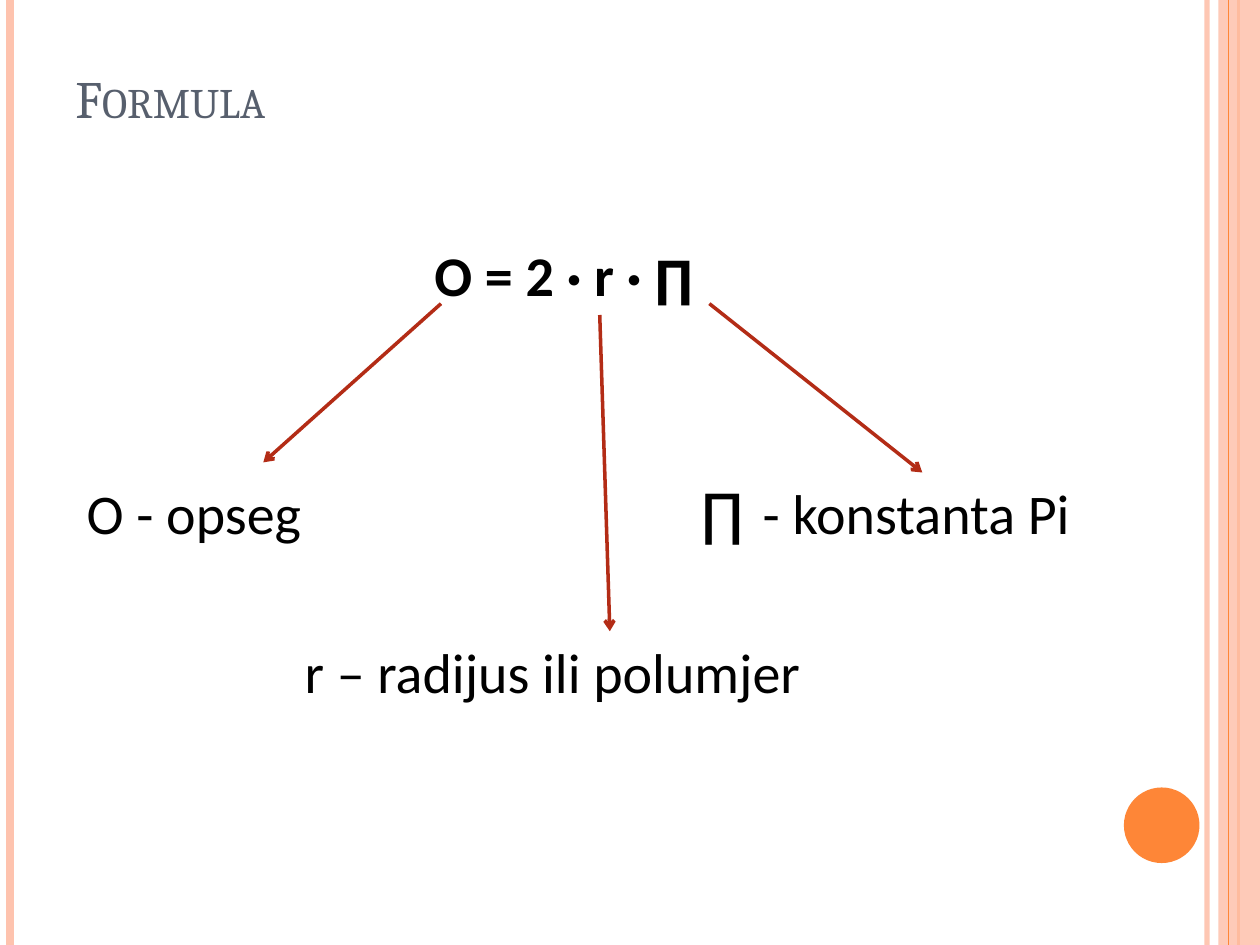
from typing import NamedTuple

from lxml import etree
from pptx import Presentation
from pptx import util as u
from pptx.dml.color import RGBColor
from pptx.enum import shapes, text
from pptx.oxml import ns

# The slide is a grid of 100 columns and 75 rows
WIDTH, HEIGHT = u.Inches(10), u.Inches(7.5)
COLUMNS, ROWS = 100, 75


class Theme:
    pale, orange, arrow = "FEC3AE", "FE8637", "B32C16"
    title, ink = "575F6D", "000000"
    heading_font, body_font, symbol_font = "Cambria", "Calibri", "Comic Neue"
    title_size, body_size, symbol_size = 30, 32, 28
    arrow_width = 2


class Box(NamedTuple):
    column: float
    row: float
    columns: float
    rows: float


class Line(NamedTuple):
    start: tuple[float, float]
    end: tuple[float, float]
    color: str
    width: float
    opacity: int = 100
    arrow: bool = False


class Label(NamedTuple):
    box: Box
    runs: list[tuple[str, dict]]


def x(column: float) -> int:
    return round(WIDTH * column / COLUMNS)


def y(row: float) -> int:
    return round(HEIGHT * row / ROWS)


def place(box: Box) -> tuple[int, int, int, int]:
    return x(box.column), y(box.row), x(box.columns), y(box.rows)


def set_color(fill, color: str, opacity: int = 100) -> None:
    fill.solid()
    fill.fore_color.rgb = RGBColor.from_string(color)
    if opacity < 100:
        element = fill._xPr.find(".//" + ns.qn("a:srgbClr"))
        etree.SubElement(element, ns.qn("a:alpha"), val=str(opacity * 1000))


def draw_line(slide, line: Line) -> None:
    connector = slide.shapes.add_connector(
        shapes.MSO_CONNECTOR.STRAIGHT,
        x(line.start[0]), y(line.start[1]), x(line.end[0]), y(line.end[1]))
    connector.line.width = u.Pt(line.width)
    set_color(connector.line.fill, line.color, line.opacity)
    properties = connector._element.spPr
    if line.arrow:
        etree.SubElement(properties.find(ns.qn("a:ln")), ns.qn("a:tailEnd"), type="arrow")
    etree.SubElement(properties, ns.qn("a:effectLst"))


def draw_shape(slide, kind, box: Box, color: str, opacity: int = 100) -> None:
    shape = slide.shapes.add_shape(kind, *place(box))
    shape.shadow.inherit = False
    shape.line.fill.background()
    set_color(shape.fill, color, opacity)


def add_run(paragraph, content: str, *, font: str = Theme.body_font,
            size: float = Theme.body_size, color: str = Theme.ink,
            bold: bool = False, small_caps: bool = False) -> None:
    run = paragraph.add_run()
    run.text = content
    run.font.name, run.font.size, run.font.bold = font, u.Pt(size), bold
    run.font.color.rgb = RGBColor.from_string(color)
    if small_caps:
        run._r.get_or_add_rPr().set("cap", "small")


def draw_label(slide, label: Label, anchor=text.MSO_ANCHOR.TOP) -> None:
    frame = slide.shapes.add_textbox(*place(label.box)).text_frame
    frame.word_wrap = True
    frame.vertical_anchor = anchor
    for content, style in label.runs:
        add_run(frame.paragraphs[0], content, **style)


def side_line(column: float, color: str, width: float, opacity: int = 100) -> Line:
    return Line((column, 0), (column, ROWS), color, width, opacity)


def pointer(start: tuple[float, float], end: tuple[float, float]) -> Line:
    return Line(start, end, Theme.arrow, Theme.arrow_width, arrow=True)


TITLE = Label(Box(5, 3.6, 81.7, 7.1), [
    ("Formula", dict(font=Theme.heading_font, size=Theme.title_size,
                     color=Theme.title, small_caps=True))])
SYMBOL = dict(font=Theme.symbol_font)
LABELS = [
    Label(Box(33.5, 18.6, 28.3, 6.4), [
        ("O = 2 · r · ", dict(bold=True)),
        ("∏", dict(SYMBOL, size=Theme.symbol_size, bold=True))]),
    Label(Box(5.9, 37.5, 22, 6.4), [("O - opseg", {})]),
    Label(Box(23.2, 50.1, 50.4, 6.4), [("r – radijus ili polumjer", {})]),
    Label(Box(54.7, 37.5, 37, 6.4), [("∏ ", SYMBOL), ("- konstanta Pi", {})]),
]
POINTERS = [
    pointer((35, 24.1), (20.9, 36.7)),
    pointer((47.6, 25), (48.4, 50.1)),
    pointer((56.3, 24.1), (73.2, 37.5)),
]


def main() -> None:
    presentation = Presentation()
    presentation.slide_width, presentation.slide_height = WIDTH, HEIGHT
    slide = presentation.slides.add_slide(presentation.slide_layouts[6])

    # Side stripes and the disc
    draw_line(slide, side_line(95.8, Theme.pale, 3, 93))
    draw_line(slide, side_line(0.8, Theme.pale, 4.5))
    draw_line(slide, side_line(98.3, Theme.orange, 1.5))
    draw_shape(slide, shapes.MSO_SHAPE.RECTANGLE, Box(96.7, 0, 3.3, ROWS), Theme.pale, 87)
    draw_line(slide, side_line(97.5, Theme.orange, 0.75))
    draw_shape(slide, shapes.MSO_SHAPE.OVAL, Box(89.2, 62.5, 6, 6), Theme.orange)

    # Title, formula and the meaning of each symbol
    draw_label(slide, TITLE, text.MSO_ANCHOR.BOTTOM)
    for label in LABELS:
        draw_label(slide, label)
    for line in POINTERS:
        draw_line(slide, line)

    presentation.save("out.pptx")


if __name__ == "__main__":
    main()
